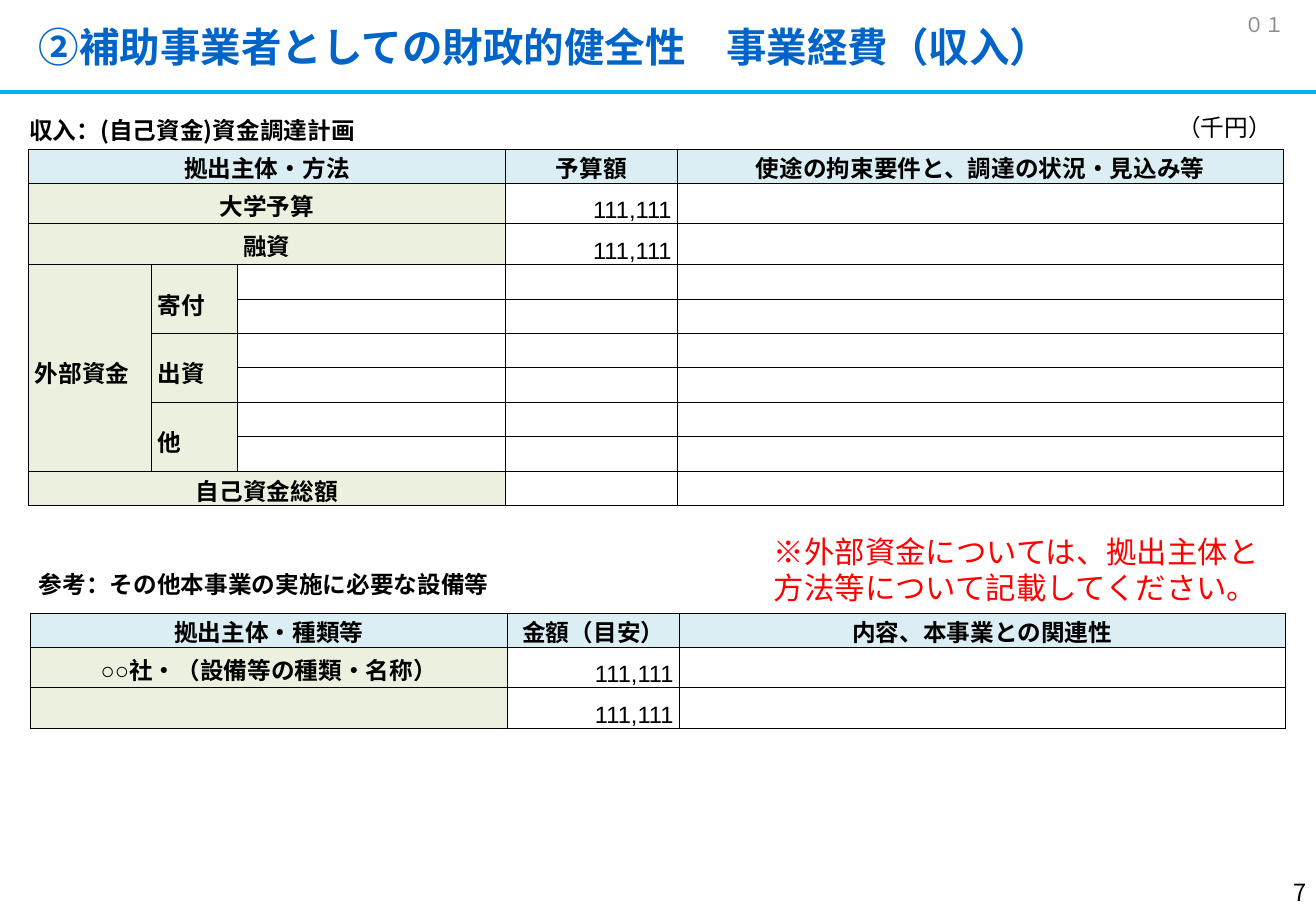
from lxml import etree
from pptx import Presentation
from pptx.dml.color import RGBColor
from pptx.enum.shapes import MSO_CONNECTOR
from pptx.enum.text import MSO_ANCHOR, PP_ALIGN
from pptx.oxml.ns import qn
from pptx.util import Cm, Pt

LEFT, CENTER, RIGHT = PP_ALIGN.LEFT, PP_ALIGN.CENTER, PP_ALIGN.RIGHT
JUSTIFY = PP_ALIGN.JUSTIFY
TOP, MIDDLE = MSO_ANCHOR.TOP, MSO_ANCHOR.MIDDLE
STRAIGHT = MSO_CONNECTOR.STRAIGHT

BLACK = RGBColor(0x00, 0x00, 0x00)
WHITE = RGBColor(0xFF, 0xFF, 0xFF)
RED = RGBColor(0xFF, 0x00, 0x00)
GRAY = RGBColor(0x8C, 0x8C, 0x8C)
TITLE_BLUE = RGBColor(0x00, 0x64, 0xC8)
RULE_BLUE = RGBColor(0x00, 0xB0, 0xF0)
HEADER_BLUE = RGBColor(0xDB, 0xEE, 0xF4)
LABEL_GREEN = RGBColor(0xEB, 0xF1, 0xDE)

TEXT_FONT = "Noto Sans CJK JP"
TABLE_FONT = "Arial"

# Cell kinds: fill, alignment, line spacing in points, bold
CELL_KINDS = {
    "header": (HEADER_BLUE, CENTER, 20, True),
    "label": (LABEL_GREEN, CENTER, 20, True),
    "side": (LABEL_GREEN, JUSTIFY, 24, True),
    "amount": (WHITE, RIGHT, 24, False),
    "blank": (WHITE, LEFT, 20, False),
}
HEADER_HEIGHT, AMOUNT_HEIGHT, BLANK_HEIGHT = 0.71, 0.85, 0.72


def format_paragraph(para, name, size, color, bold=False, align=LEFT):
    para.alignment = align
    font = para.font
    font.size, font.bold, font.name = Pt(size), bold, name
    font.color.rgb = color
    east_asian = etree.SubElement(para._p.pPr.find(qn("a:defRPr")), qn("a:ea"))
    east_asian.set("typeface", name)


def add_text(slide, text, place, size, color=BLACK, bold=False,
             align=LEFT, anchor=TOP):
    box = slide.shapes.add_textbox(*(Cm(length) for length in place))
    frame = box.text_frame
    frame.word_wrap = True
    frame.vertical_anchor = anchor
    frame.text = text
    format_paragraph(frame.paragraphs[0], TEXT_FONT, size, color, bold, align)


def set_title(slide, text):
    title = slide.shapes.title
    title.left, title.top = Cm(0.56), Cm(0.33)
    title.width, title.height = Cm(26.42), Cm(1.27)
    frame = title.text_frame
    frame.vertical_anchor = MIDDLE
    frame.text = text
    format_paragraph(frame.paragraphs[0], TEXT_FONT, 24, TITLE_BLUE, True)


def add_rule(slide, top, width):
    rule = slide.shapes.add_connector(STRAIGHT, 0, Cm(top), width, Cm(top))
    rule.line.color.rgb = RULE_BLUE
    rule.line.width = Pt(2.25)
    etree.SubElement(rule._element.spPr, qn("a:effectLst"))


def set_borders(cell):
    properties = cell._tc.get_or_add_tcPr()
    for position, side in enumerate(("lnL", "lnR", "lnT", "lnB")):
        line = etree.Element(qn(f"a:{side}"), w=str(Pt(0.5)))
        fill = etree.SubElement(line, qn("a:solidFill"))
        etree.SubElement(fill, qn("a:srgbClr"), val=str(BLACK))
        properties.insert(position, line)


def format_cell(cell, text, kind):
    fill, align, spacing, bold = CELL_KINDS[kind]
    cell.margin_left = cell.margin_right = Cm(0.13)
    cell.margin_top = cell.margin_bottom = 0
    cell.vertical_anchor = MIDDLE
    cell.fill.solid()
    cell.fill.fore_color.rgb = fill
    cell.text = text
    para = cell.text_frame.paragraphs[0]
    para.line_spacing = Pt(spacing)
    format_paragraph(para, TABLE_FONT, 14, BLACK, bold, align)
    set_borders(cell)


def add_grid(slide, left, top, widths, heights, contents, merges=()):
    """contents maps (row, column) to (text, kind); other cells stay blank."""
    table = slide.shapes.add_table(
        len(heights), len(widths), Cm(left), Cm(top),
        Cm(sum(widths)), Cm(sum(heights))).table
    table.first_row = table.horz_banding = False
    for column, width in zip(table.columns, widths):
        column.width = Cm(width)
    for row, height in zip(table.rows, heights):
        row.height = Cm(height)
    for row in range(len(heights)):
        for column in range(len(widths)):
            text, kind = contents.get((row, column), ("", "blank"))
            format_cell(table.cell(row, column), text, kind)
    for first, last in merges:
        table.cell(*first).merge(table.cell(*last))


def add_income_table(slide):
    contents = {
        (0, 0): ("拠出主体・方法", "header"),
        (0, 3): ("予算額", "header"),
        (0, 4): ("使途の拘束要件と、調達の状況・見込み等", "header"),
        (1, 0): ("大学予算", "label"),
        (1, 3): ("111,111", "amount"),
        (2, 0): ("融資", "label"),
        (2, 3): ("111,111", "amount"),
        (3, 0): ("外部資金", "side"),
        (9, 0): ("自己資金総額", "label"),
    }
    merges = [((row, 0), (row, 2)) for row in (0, 1, 2, 9)]
    merges.append(((3, 0), (8, 0)))
    # Each kind of outside funding takes two rows
    for row, source in zip((3, 5, 7), ("寄付", "出資", "他")):
        contents[row, 1] = (source, "side")
        merges.append(((row, 1), (row + 1, 1)))
    heights = [HEADER_HEIGHT] + [AMOUNT_HEIGHT] * 2 + [BLANK_HEIGHT] * 7
    add_grid(slide, 0.6, 3.12, (2.57, 1.8, 5.59, 3.61, 12.65),
             heights, contents, merges)


def add_equipment_table(slide):
    contents = {
        (0, 0): ("拠出主体・種類等", "header"),
        (0, 1): ("金額（目安）", "header"),
        (0, 2): ("内容、本事業との関連性", "header"),
        (1, 0): ("○○社・（設備等の種類・名称）", "label"),
        (1, 1): ("111,111", "amount"),
        (2, 0): ("", "label"),
        (2, 1): ("111,111", "amount"),
    }
    add_grid(slide, 0.64, 12.82, (9.96, 3.61, 12.65),
             [HEADER_HEIGHT] + [AMOUNT_HEIGHT] * 2, contents)


def main():
    deck = Presentation()
    deck.slide_width, deck.slide_height = Cm(27.51), Cm(19.05)
    slide = deck.slides.add_slide(deck.slide_layouts[5])

    # Heading and page marks
    set_title(slide, "②補助事業者としての財政的健全性　事業経費（収入）")
    add_rule(slide, 1.93, deck.slide_width)
    add_text(slide, "０１", (25.76, 0, 1.75, 1.02), 12, GRAY, anchor=MIDDLE)
    add_text(slide, "7", (21.13, 18.14, 6.43, 1.02), 14,
             align=RIGHT, anchor=MIDDLE)

    # Income plan
    add_text(slide, "収入：(自己資金)資金調達計画",
             (0.36, 2.29, 9.45, 0.86), 14, bold=True)
    add_text(slide, "（千円）", (24.36, 2.24, 2.87, 0.86), 14)
    add_income_table(slide)
    add_text(slide, "※外部資金については、拠出主体と方法等について記載してください。",
             (15.93, 11.02, 10.8, 1.8), 18, RED)

    # Reference: equipment
    add_text(slide, "参考：その他本事業の実施に必要な設備等",
             (0.56, 11.79, 13.59, 0.86), 14, bold=True)
    add_equipment_table(slide)

    deck.save("out.pptx")


if __name__ == "__main__":
    main()
